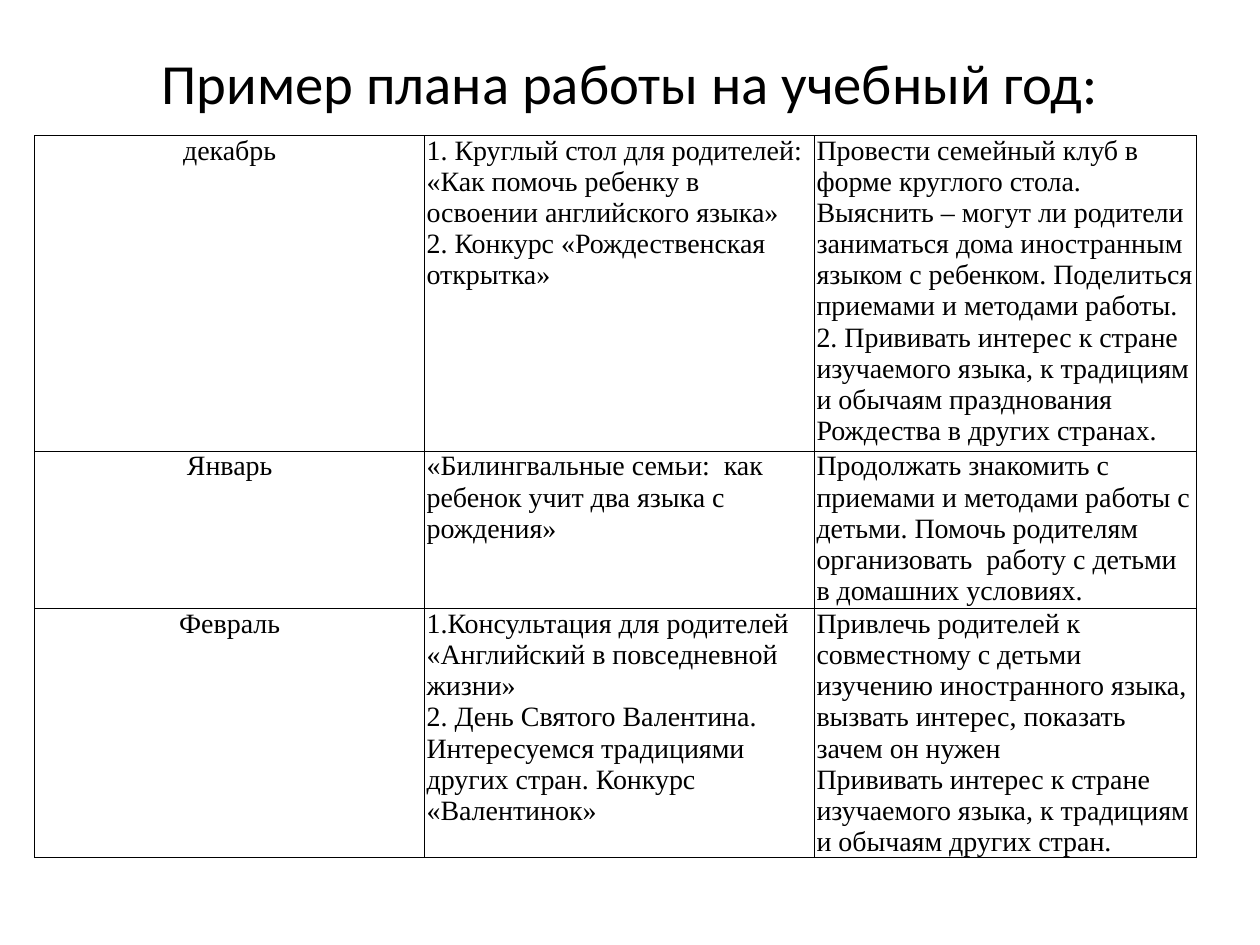
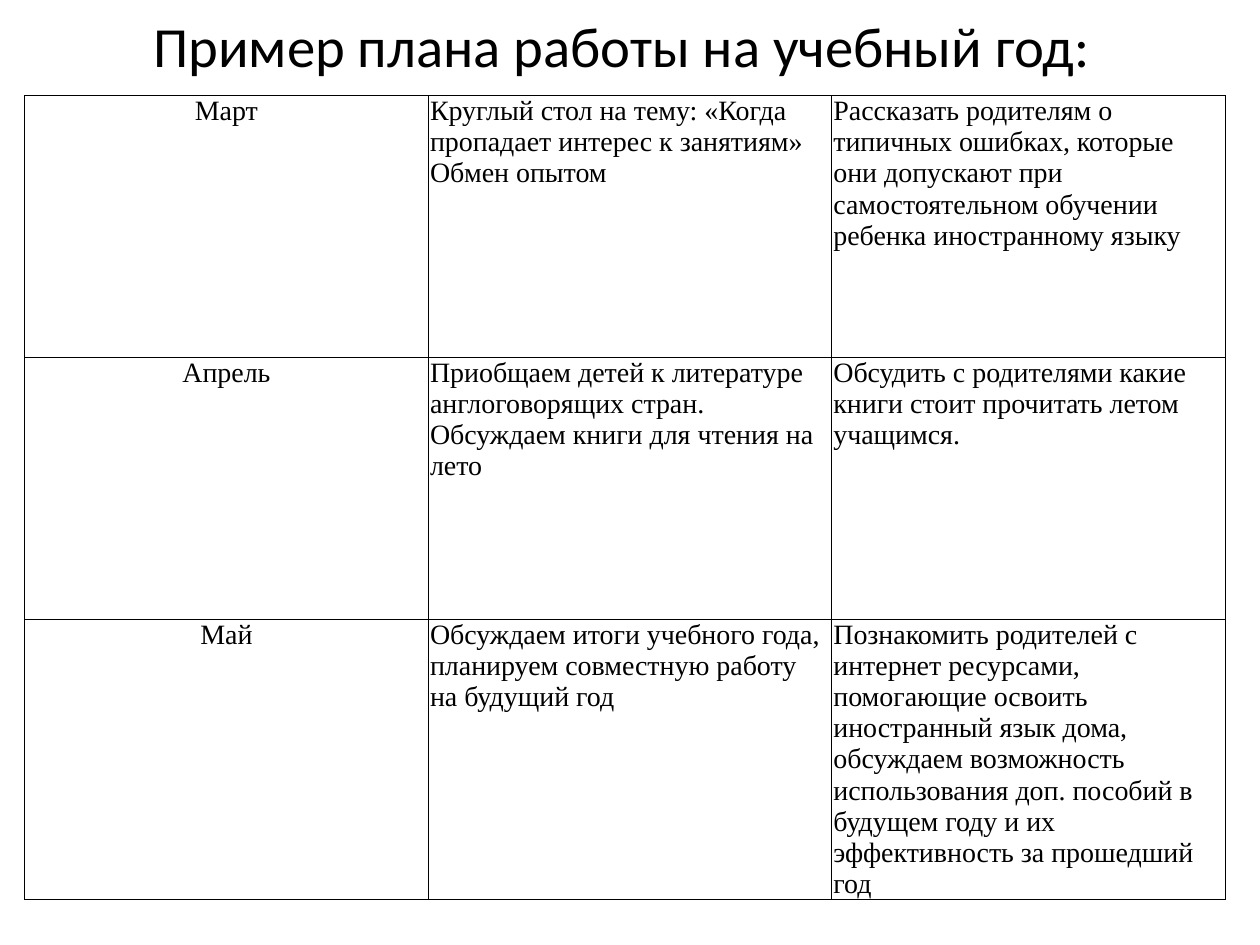
from lxml.etree import SubElement
from pptx import Presentation
from pptx.dml.color import RGBColor
from pptx.enum.text import MSO_ANCHOR as Anchor, MSO_AUTO_SIZE as AutoSize, PP_ALIGN as Align
from pptx.oxml.ns import qn
from pptx.util import Cm, Pt

BLACK, WHITE = "000000", "FFFFFF"
TITLE = "Пример плана работы на учебный год:"
TITLE_ONLY = 5

# Each row: month, events, goals; every cell is a list of paragraphs.
WINTER = [
    (["декабрь"],
     ["1. Круглый стол для родителей: «Как помочь ребенку в освоении английского языка»",
      "2. Конкурс «Рождественская открытка»"],
     ["Провести семейный клуб в форме круглого стола. Выяснить – могут ли родители "
      "заниматься дома иностранным языком с ребенком. Поделиться приемами и методами работы.",
      "2. Прививать интерес к стране изучаемого языка, к традициям и обычаям "
      "празднования Рождества в других странах."]),
    (["Январь"],
     ["«Билингвальные семьи:  как ребенок учит два языка с рождения»"],
     ["Продолжать знакомить с приемами и методами работы с детьми. Помочь родителям "
      "организовать  работу с детьми в домашних условиях."]),
    (["Февраль"],
     ["1.Консультация для родителей «Английский в повседневной жизни»",
      "2. День Святого Валентина. Интересуемся традициями других стран. "
      "Конкурс «Валентинок»"],
     ["Привлечь родителей к совместному с детьми изучению иностранного языка, "
      "вызвать интерес, показать зачем он нужен",
      "Прививать интерес к стране изучаемого языка, к традициям и обычаям других стран."]),
]
SPRING = [
    (["Март"],
     ["Круглый стол на тему: «Когда пропадает интерес к занятиям»", "Обмен опытом"],
     ["Рассказать родителям о типичных ошибках, которые они допускают при "
      "самостоятельном обучении ребенка иностранному языку"]),
    (["Апрель"],
     ["Приобщаем детей к литературе англоговорящих стран. "
      "Обсуждаем книги для чтения на лето"],
     ["Обсудить с родителями какие книги стоит прочитать летом учащимся."]),
    (["Май"],
     ["Обсуждаем итоги учебного года, планируем совместную работу на будущий год"],
     ["Познакомить родителей с интернет ресурсами, помогающие освоить иностранный "
      "язык дома, обсуждаем возможность использования доп. пособий в будущем году "
      "и их эффективность за прошедший год"]),
]


def color(value):
    return RGBColor.from_string(value)


def write(frame, paragraphs, *, font, size, align=Align.LEFT, anchor=Anchor.TOP, ink=BLACK):
    frame.word_wrap = True
    frame.vertical_anchor = anchor
    for index, text in enumerate(paragraphs):
        paragraph = frame.add_paragraph() if index else frame.paragraphs[0]
        paragraph.alignment = align
        run = paragraph.add_run()
        run.text = text
        run.font.name, run.font.size = font, Pt(size)
        run.font.color.rgb = color(ink)


def add_title(slide, left, top):
    title = slide.shapes.title
    title.left, title.top, title.width, title.height = Cm(left), Cm(top), Cm(22.86), Cm(1.75)
    title.text_frame.auto_size = AutoSize.NONE
    write(title.text_frame, [TITLE], font="Calibri", size=32.4,
          align=Align.CENTER, anchor=Anchor.MIDDLE)


def add_borders(cell):
    properties = cell._tc.get_or_add_tcPr()
    for side in ("lnL", "lnR", "lnT", "lnB"):
        line = SubElement(properties, qn(f"a:{side}"), w=str(Pt(0.5)))
        fill = SubElement(line, qn("a:solidFill"))
        SubElement(fill, qn("a:srgbClr"), val=BLACK)


def format_cell(cell, paragraphs, align):
    cell.margin_left = cell.margin_right = Cm(0.04)
    cell.margin_top = cell.margin_bottom = 0
    add_borders(cell)
    cell.fill.solid()
    cell.fill.fore_color.rgb = color(WHITE)
    write(cell.text_frame, paragraphs, font="Times New Roman", size=16, align=align)


def add_plan(slide, plan, left, top, widths, heights):
    table = slide.shapes.add_table(len(plan), len(widths), Cm(left), Cm(top),
                                   Cm(sum(widths)), Cm(sum(heights))).table
    table.first_row = table.horz_banding = False
    for column, width in zip(table.columns, widths):
        column.width = Cm(width)
    for row, height, month in zip(table.rows, heights, plan):
        row.height = Cm(height)
        for cell, paragraphs, align in zip(row.cells, month,
                                           (Align.CENTER, Align.LEFT, Align.LEFT)):
            format_cell(cell, paragraphs, align)


def add_plan_slide(deck, plan, title_at, table_at, widths, heights):
    slide = deck.slides.add_slide(deck.slide_layouts[TITLE_ONLY])
    add_title(slide, *title_at)
    add_plan(slide, plan, *table_at, widths, heights)


def main():
    deck = Presentation()
    deck.slide_width, deck.slide_height = Cm(25.4), Cm(19.05)
    add_plan_slide(deck, WINTER, title_at=(1.27, 0.77), table_at=(0.7, 2.73),
                   widths=(7.86, 7.86, 7.69), heights=(6.36, 3.18, 4.45))
    add_plan_slide(deck, SPRING, title_at=(1.1, 0.03), table_at=(0.5, 1.93),
                   widths=(8.13, 8.13, 7.95), heights=(5.28, 5.28, 4.22))
    deck.save("out.pptx")


if __name__ == "__main__":
    main()
